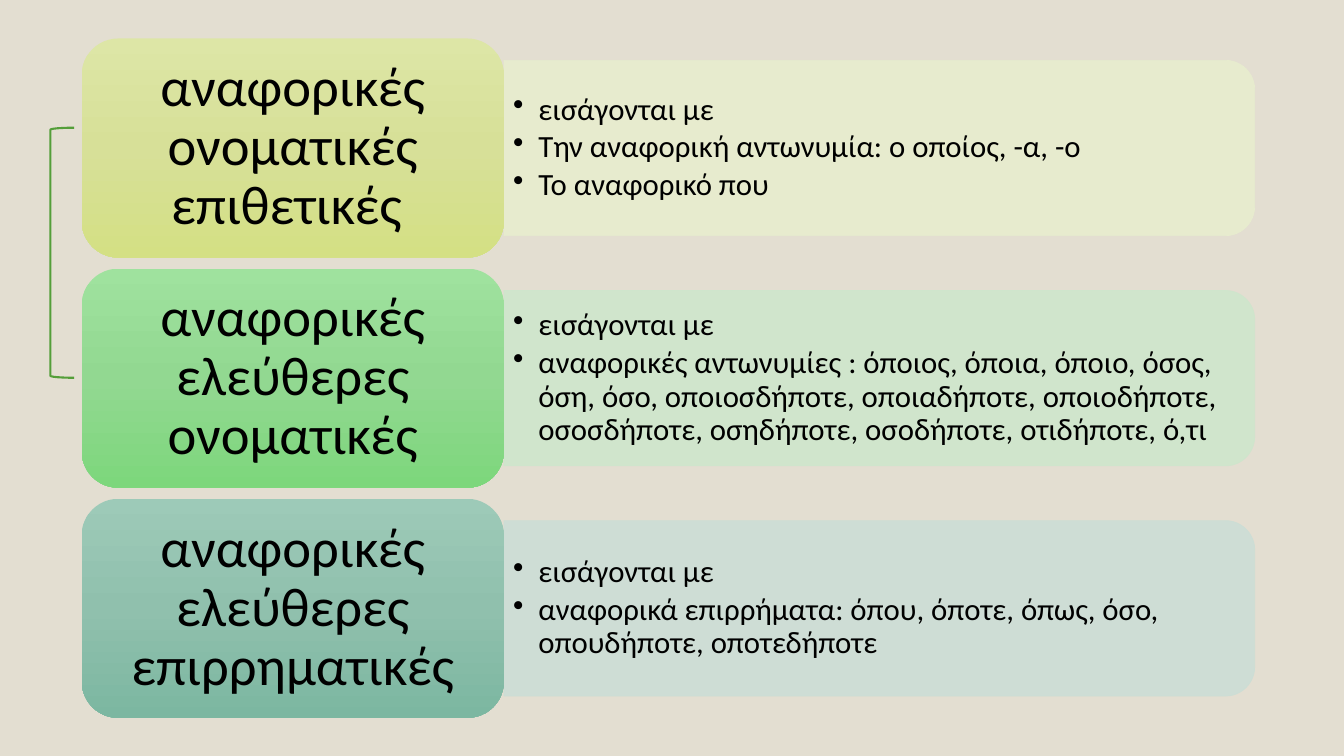
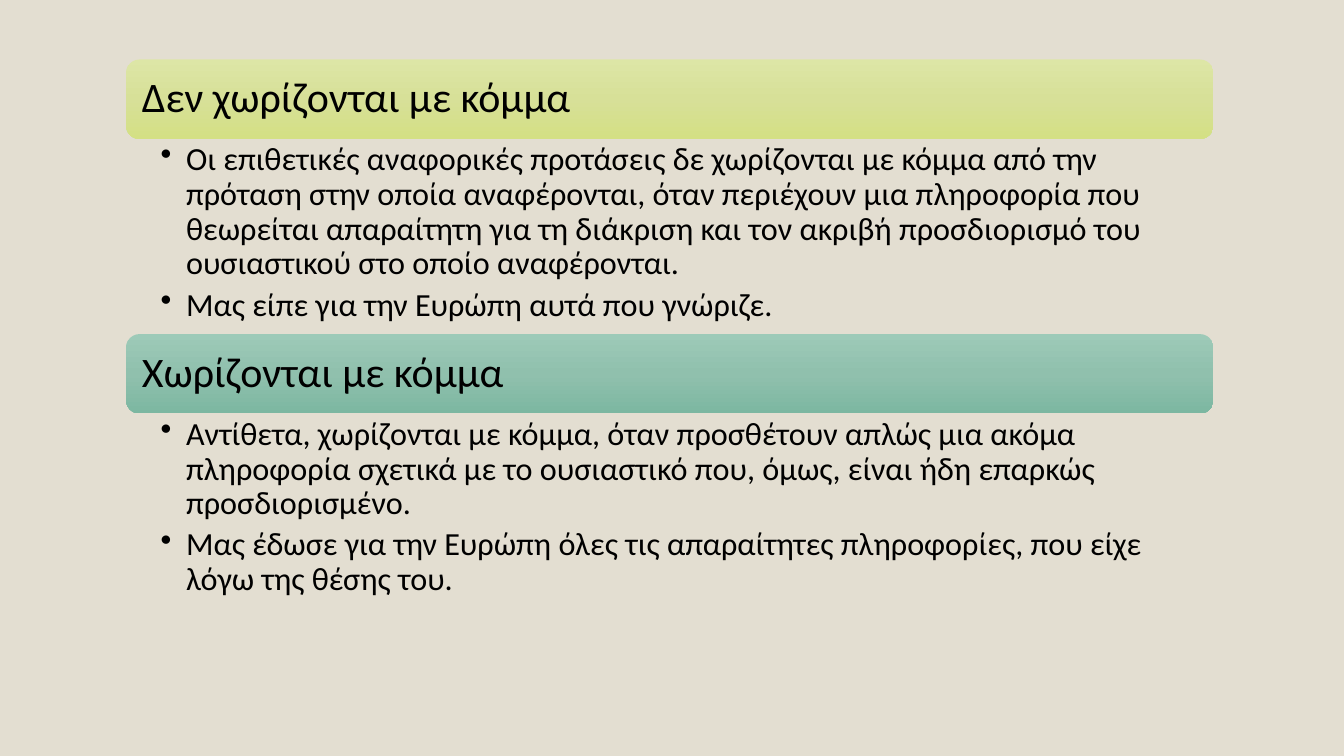
from copy import deepcopy

from lxml.etree import SubElement
from pptx import Presentation
from pptx.dml.color import RGBColor
from pptx.enum.shapes import MSO_SHAPE as SHAPE
from pptx.enum.text import MSO_ANCHOR as ANCHOR, PP_ALIGN as ALIGN
from pptx.oxml.ns import qn
from pptx.util import Cm, Pt

FONT = "Calibri"
SAND = RGBColor(0xE3, 0xDE, 0xD1)
BLACK = RGBColor(0x00, 0x00, 0x00)
GREEN = RGBColor(0x54, 0x9E, 0x39)
LIME_FADE = (RGBColor(0xDD, 0xE6, 0xA6), RGBColor(0xD7, 0xE0, 0x98), RGBColor(0xD4, 0xE0, 0x84))
GREEN_FADE = (RGBColor(0x9F, 0xE2, 0x9E), RGBColor(0x92, 0xD8, 0x91), RGBColor(0x7D, 0xD7, 0x7C))
TEAL_FADE = (RGBColor(0x9D, 0xCA, 0xB8), RGBColor(0x90, 0xC0, 0xAD), RGBColor(0x7C, 0xB7, 0xA1))
LIME_PALE = RGBColor(0xE8, 0xED, 0xCE)
GREEN_PALE = RGBColor(0xCF, 0xE6, 0xCC)
TEAL_PALE = RGBColor(0xCC, 0xDD, 0xD6)

CLAUSES = [
    ("αναφορικές ονοματικές επιθετικές ", LIME_FADE, LIME_PALE,
     ["εισάγονται με",
      "Την αναφορική αντωνυμία: ο οποίος, -α, -ο",
      "Το αναφορικό που"]),
    ("αναφορικές ελεύθερες ονοματικές", GREEN_FADE, GREEN_PALE,
     ["εισάγονται με",
      "αναφορικές αντωνυμίες : όποιος, όποια, όποιο, όσος, όση, όσο, "
      "οποιοσδήποτε, οποιαδήποτε, οποιοδήποτε, οσοσδήποτε, οσηδήποτε, "
      "οσοδήποτε, οτιδήποτε, ό,τι"]),
    ("αναφορικές ελεύθερες επιρρηματικές", TEAL_FADE, TEAL_PALE,
     ["εισάγονται με",
      "αναφορικά επιρρήματα: όπου, όποτε, όπως, όσο, οπουδήποτε, οποτεδήποτε"]),
]
COMMA_RULES = [
    ("Δεν χωρίζονται με κόμμα", LIME_FADE, 4.92,
     ["Οι επιθετικές αναφορικές προτάσεις δε χωρίζονται με κόμμα από την πρόταση "
      "στην οποία αναφέρονται, όταν περιέχουν μια πληροφορία που θεωρείται "
      "απαραίτητη για τη διάκριση και τον ακριβή προσδιορισμό του ουσιαστικού "
      "στο οποίο αναφέρονται.",
      "Μας είπε για την Ευρώπη αυτά που γνώριζε."]),
    ("Χωρίζονται με κόμμα", TEAL_FADE, 6.07,
     ["Αντίθετα, χωρίζονται με κόμμα, όταν προσθέτουν απλώς μια ακόμα πληροφορία "
      "σχετικά με το ουσιαστικό που, όμως, είναι ήδη επαρκώς προσδιορισμένο.",
      "Μας έδωσε για την Ευρώπη όλες τις απαραίτητες πληροφορίες, που είχε λόγω "
      "της θέσης του."]),
]


def write(tf, lines, *, size, insets, align=ALIGN.LEFT, anchor=ANCHOR.MIDDLE,
          bullet=False, after=0):
    tf.word_wrap = True
    tf.vertical_anchor = anchor
    tf.margin_left, tf.margin_top, tf.margin_right, tf.margin_bottom = map(Cm, insets)
    for i, line in enumerate(lines):
        p = tf.paragraphs[0] if i == 0 else tf.add_paragraph()
        p.alignment = align
        p.line_spacing = 0.9
        p.space_after = Pt(after)
        if bullet:
            p.level = 1
            pPr = p._p.get_or_add_pPr()
            pPr.set("marL", str(Cm(0.64)))
            pPr.set("indent", str(-Cm(0.64)))
            SubElement(pPr, qn("a:buChar")).set("char", "•")
        r = p.add_run()
        r.text = line
        r.font.name, r.font.size = FONT, Pt(size)
        r.font.color.rgb = BLACK


class Deck:
    def __init__(self):
        self.prs = Presentation()
        self.prs.slide_width, self.prs.slide_height = Cm(33.87), Cm(19.05)
        fill = self.prs.slide_master.background.fill
        fill.solid()
        fill.fore_color.rgb = SAND
        self.s = None

    def new_slide(self):
        self.s = self.prs.slides.add_slide(self.prs.slide_layouts[6])

    def shape(self, kind, x, y, w, h):
        sp = self.s.shapes.add_shape(kind, Cm(x), Cm(y), Cm(w), Cm(h))
        sp.shadow.inherit = False
        return sp

    def heading(self, text, fade, x, y, w, h, **fmt):
        sp = self.shape(SHAPE.ROUNDED_RECTANGLE, x, y, w, h)
        sp.line.fill.background()
        sp.fill.gradient()
        sp.fill.gradient_angle = 270
        gs = sp._element.spPr.find(".//" + qn("a:gs"))
        gs.addnext(deepcopy(gs))
        for stop, color, pos in zip(sp.fill.gradient_stops, fade, (0, 0.5, 1)):
            stop.color.rgb = color
            stop.position = pos
        write(sp.text_frame, [text], **fmt)

    def panel(self, color, x, y, w, h):
        shift = (w - h) / 2
        sp = self.shape(SHAPE.ROUND_2_SAME_RECTANGLE, x + shift, y - shift, h, w)
        sp.rotation = 90
        sp.line.width = Pt(0.5)
        for fill in (sp.fill, sp.line.fill):
            fill.solid()
            fill.fore_color.rgb = color
        for clr in sp._element.spPr.iter(qn("a:srgbClr")):
            SubElement(clr, qn("a:alpha")).set("val", "90000")

    def bullets(self, lines, x, y, w, h, **fmt):
        sp = self.s.shapes.add_textbox(Cm(x), Cm(y), Cm(w), Cm(h))
        write(sp.text_frame, lines, bullet=True, **fmt)

    def bracket(self, x, y, w, h):
        sp = self.shape(SHAPE.LEFT_BRACKET, x, y, w, h)
        sp.fill.background()
        sp.line.color.rgb = GREEN
        sp.line.width = Pt(1.5)


def clause_slide(deck):
    deck.new_slide()
    left, top, card_w, card_h, gap = 2.06, 0.97, 10.64, 5.52, 0.28
    panel_h, text_h = 4.42, 3.98
    x = left + card_w
    for i, (name, fade, pale, lines) in enumerate(CLAUSES):
        y = top + i * (card_h + gap)
        deck.panel(pale, x, y + (card_h - panel_h) / 2, 18.92, panel_h)
        deck.bullets(lines, x, y + (card_h - text_h) / 2, 18.7, text_h,
                     size=22, insets=(0.23, 0.13, 0.23, 0.13), after=3.3)
        deck.heading(name, fade, left, y, card_w, card_h, size=39,
                     insets=(0.41, 0.2, 0.41, 0.2), align=ALIGN.CENTER)
    deck.bracket(1.27, 3.22, 0.6, 6.3)


def comma_slide(deck):
    deck.new_slide()
    x, y, w, bar_h = 3.18, 1.5, 27.4, 2
    for name, fade, body_h, lines in COMMA_RULES:
        deck.heading(name, fade, x, y, w, bar_h, size=30, insets=(0.3,) * 4)
        y += bar_h
        deck.bullets(lines, x, y, w, body_h, size=23, anchor=ANCHOR.TOP,
                     insets=(0.87, 0.1, 0.58, 0.1), after=4.6)
        y += body_h


def main():
    deck = Deck()
    clause_slide(deck)
    comma_slide(deck)
    deck.prs.save("out.pptx")


if __name__ == "__main__":
    main()
